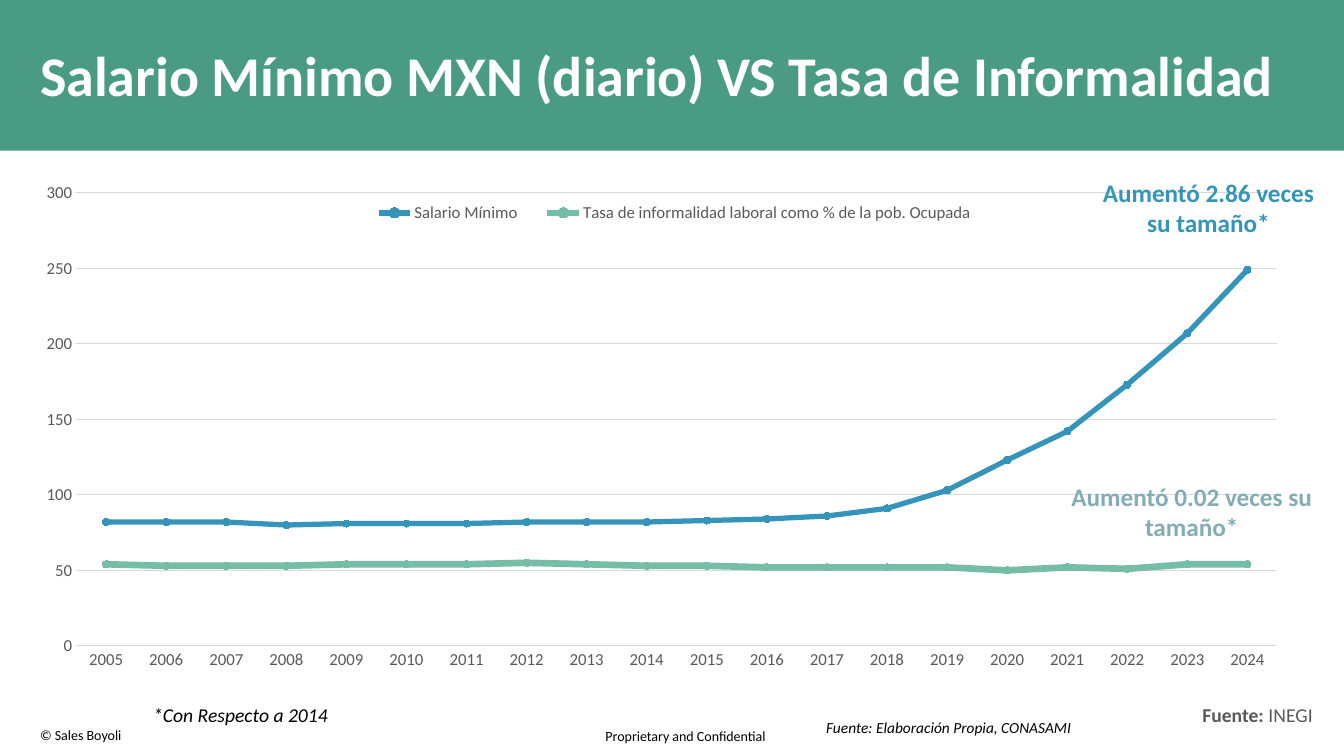
import pptx
import pptx.chart.data
import pptx.dml.color
import pptx.enum.chart
import pptx.enum.shapes
import pptx.enum.text
import pptx.oxml
import pptx.oxml.ns
import pptx.util

Cm = pptx.util.Cm
Pt = pptx.util.Pt
RGBColor = pptx.dml.color.RGBColor
qn = pptx.oxml.ns.qn

FONT = "Calibri"
WHITE = RGBColor(0xFF, 0xFF, 0xFF)
BLACK = RGBColor(0, 0, 0)
GREEN = RGBColor(0x4A, 0x9B, 0x83)
GRAY = RGBColor(0x59, 0x59, 0x59)
LIGHT_GRAY = RGBColor(0xD9, 0xD9, 0xD9)
BLUE = RGBColor(0x34, 0x94, 0xBA)
MINT = RGBColor(0x75, 0xBD, 0xA7)
TEAL = RGBColor(0x58, 0xB6, 0xC0)
BLUE_GRAY = RGBColor(0x84, 0xAC, 0xB6)


def set_font(font, size, color, bold=False, italic=False):
    font.name = FONT
    font.size = Pt(size)
    font.color.rgb = color
    font.bold = bold
    font.italic = italic


def make_layout(target, x, y, width, height):
    values = {"xMode": "edge", "yMode": "edge", "x": x, "y": y, "w": width, "h": height}
    entries = "".join(f'<c:{name} val="{value}"/>' for name, value in values.items())
    return pptx.oxml.parse_xml(
        f'<c:layout {pptx.oxml.ns.nsdecls("c")}>'
        f"<c:manualLayout>{target}{entries}</c:manualLayout></c:layout>"
    )


presentation = pptx.Presentation()
presentation.slide_width = Cm(33.87)
presentation.slide_height = Cm(19.05)
slide = presentation.slides.add_slide(presentation.slide_layouts[5])

band = slide.shapes.add_shape(
    pptx.enum.shapes.MSO_SHAPE.RECTANGLE, 0, 0, presentation.slide_width, Cm(3.8)
)
band.shadow.inherit = False
band.fill.solid()
band.fill.fore_color.rgb = GREEN
band.line.fill.background()
slide.shapes.title._element.addprevious(band._element)

title = slide.shapes.title
title.left, title.top, title.width, title.height = Cm(0.76), Cm(0.36), Cm(32.31), Cm(3.23)
title.text_frame.text = "Salario Mínimo MXN (diario) VS Tasa de Informalidad"
title.text_frame.vertical_anchor = pptx.enum.text.MSO_ANCHOR.MIDDLE
title.text_frame.auto_size = pptx.enum.text.MSO_AUTO_SIZE.NONE
title_paragraph = title.text_frame.paragraphs[0]
title_paragraph.alignment = pptx.enum.text.PP_ALIGN.LEFT
title_paragraph.line_spacing = 0.9
set_font(title_paragraph.font, 40, WHITE, bold=True)

series_rows = [
    ("Salario Mínimo", BLUE, 3.75, BLUE,
     [82, 82, 82, 80, 81, 81, 81, 82, 82, 82, 83, 84, 86, 91, 103, 123, 142, 173, 207, 249]),
    ("Tasa de informalidad laboral como % de la pob. Ocupada", MINT, 4.75, TEAL,
     [54, 53, 53, 53, 54, 54, 54, 55, 54, 53, 53, 52, 52, 52, 52, 50, 52, 51, 54, 54]),
]
chart_data = pptx.chart.data.CategoryChartData()
chart_data.categories = [str(year) for year in range(2005, 2025)]
for name, color, width, marker_color, values in series_rows:
    chart_data.add_series(name, values)

chart = slide.shapes.add_chart(
    pptx.enum.chart.XL_CHART_TYPE.LINE_MARKERS,
    Cm(0.53), Cm(4.34), Cm(32.31), Cm(13.69), chart_data,
).chart
chart.has_title = False
set_font(chart.font, 10, BLACK)
chart.plots[0].vary_by_categories = False

for series, (name, color, width, marker_color, values) in zip(chart.plots[0].series, series_rows):
    series.smooth = False
    series.format.line.color.rgb = color
    series.format.line.width = Pt(width)
    series.marker.style = pptx.enum.chart.XL_MARKER_STYLE.CIRCLE
    series.marker.size = 5
    series.marker.format.fill.solid()
    series.marker.format.fill.fore_color.rgb = marker_color
    series.marker.format.line.color.rgb = marker_color

for axis in (chart.category_axis, chart.value_axis):
    axis.major_tick_mark = pptx.enum.chart.XL_TICK_MARK.NONE
    axis.minor_tick_mark = pptx.enum.chart.XL_TICK_MARK.NONE
    set_font(axis.tick_labels.font, 12, GRAY)
chart.category_axis.format.line.color.rgb = LIGHT_GRAY
chart.category_axis.format.line.width = Pt(0.75)
value_axis = chart.value_axis
value_axis.minimum_scale, value_axis.maximum_scale, value_axis.major_unit = 0, 300, 50
value_axis.format.line.fill.background()
value_axis.has_major_gridlines = True
value_axis.major_gridlines.format.line.color.rgb = LIGHT_GRAY
value_axis.major_gridlines.format.line.width = Pt(0.75)

chart.has_legend = True
legend = chart.legend
legend.position = pptx.enum.chart.XL_LEGEND_POSITION.BOTTOM
legend.include_in_layout = False
set_font(legend.font, 12, GRAY)

plot_area = chart._chartSpace.chart.plotArea
for parent in (plot_area, legend._element):
    for old_layout in parent.findall(qn("c:layout")):
        parent.remove(old_layout)
plot_area.insert(0, make_layout('<c:layoutTarget val="inner"/>', 0.043, 0.038, 0.937, 0.834))
legend._element.find(qn("c:legendPos")).addnext(make_layout("", 0.26, 0.04, 0.5, 0.07))

LEFT = pptx.enum.text.PP_ALIGN.LEFT
CENTER = pptx.enum.text.PP_ALIGN.CENTER
labels = [
    (15.01, 18.21, 4.6, 0.69, ["Proprietary and Confidential"], 10, BLACK, False, False, LEFT, False),
    (0.76, 18.19, 8.56, 0.69, ["© Sales Boyoli"], 10, BLACK, False, False, LEFT, True),
    (30.05, 17.6, 3.3, 1.45, ["Fuente: ", "INEGI"], 14, GRAY, True, False, LEFT, False),
    (26.72, 12.01, 6.63, 1.8, ["Aumentó 0.02 veces su tamaño*"], 18, BLUE_GRAY, True, False, CENTER, True),
    (27.38, 4.34, 6.15, 1.8, ["Aumentó 2.86 veces su tamaño*"], 18, BLUE, True, False, CENTER, True),
    (3.61, 17.6, 5.61, 0.86, ["*Con Respecto a 2014"], 14, BLACK, False, True, LEFT, True),
    (20.57, 17.96, 11.99, 0.74, ["Fuente: Elaboración Propia, CONASAMI"], 11, BLACK, False, True, LEFT, True),
]
for left, top, width, height, texts, size, color, bold, italic, alignment, wrap in labels:
    text_box = slide.shapes.add_textbox(Cm(left), Cm(top), Cm(width), Cm(height))
    text_box.text_frame.word_wrap = wrap
    paragraph = text_box.text_frame.paragraphs[0]
    paragraph.alignment = alignment
    set_font(paragraph.font, size, color, bold, italic)
    for index, text in enumerate(texts):
        run = paragraph.add_run()
        run.text = text
        set_font(run.font, size, color, bold and index == 0, italic)

presentation.save("out.pptx")
